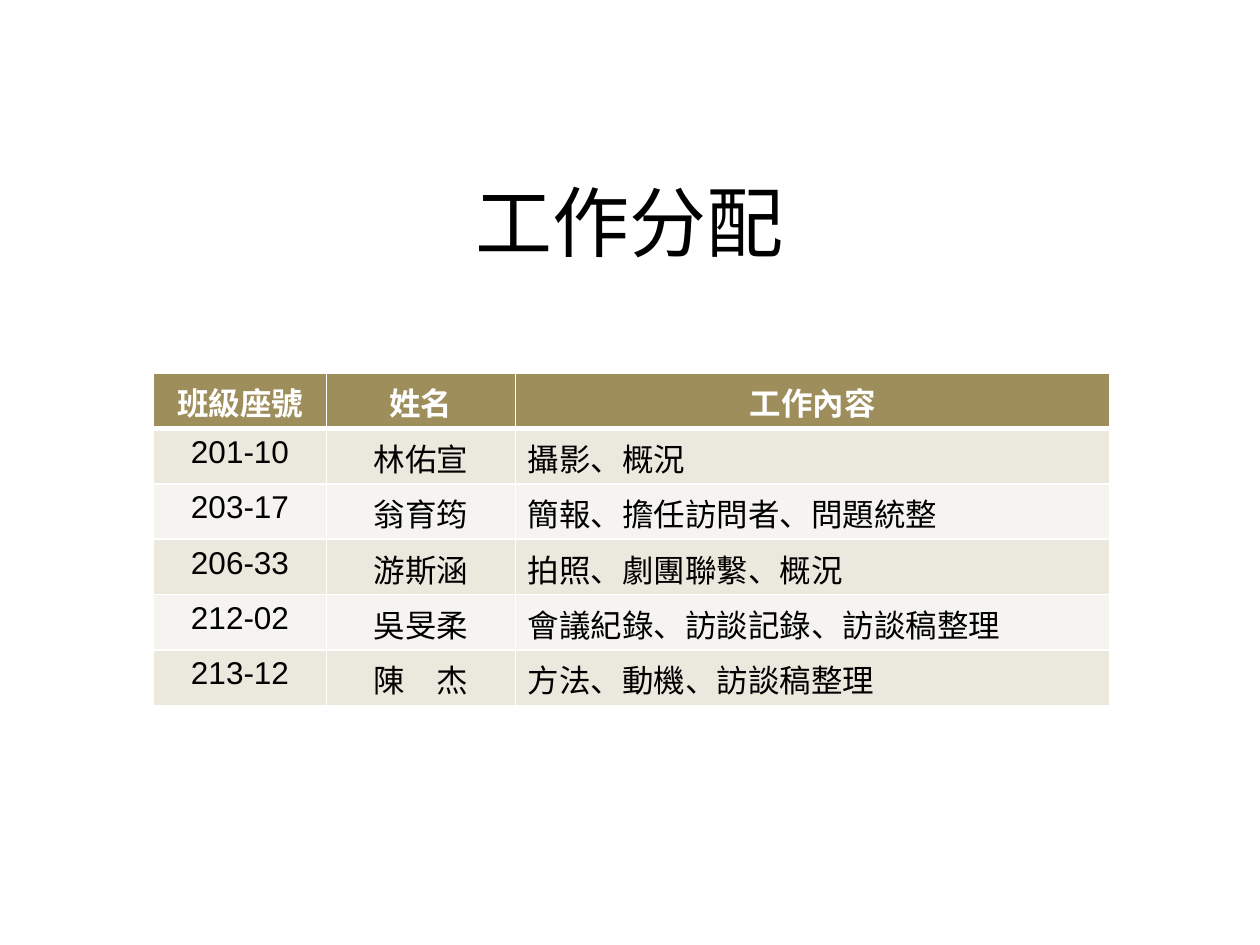
from typing import NamedTuple

import lxml.etree
import pptx
import pptx.dml.color
import pptx.enum.text
import pptx.oxml.ns
import pptx.util

Inches = pptx.util.Inches
Align = pptx.enum.text.PP_ALIGN

COLORS = {
    "text": "000000",
    "white": "FFFFFF",
    "header": "9E8E5C",
    "odd_row": "EBE8DD",
    "even_row": "F6F4F0",
}


class Column(NamedTuple):
    heading: str
    width: float
    alignment: Align


class Assignment(NamedTuple):
    seat: str
    name: str
    work: str


COLUMNS = [
    Column("班級座號", 1.37, Align.CENTER),
    Column("姓名", 1.5, Align.CENTER),
    Column("工作內容", 4.72, Align.LEFT),
]
ASSIGNMENTS = [
    Assignment("201-10", "林佑宣", "攝影、概況"),
    Assignment("203-17", "翁育筠", "簡報、擔任訪問者、問題統整"),
    Assignment("206-33", "游斯涵", "拍照、劇團聯繫、概況"),
    Assignment("212-02", "吳旻柔", "會議紀錄、訪談記錄、訪談稿整理"),
    Assignment("213-12", "陳　杰", "方法、動機、訪談稿整理"),
]
ROW_HEIGHT = 0.44
THIN, THICK = 1, 3


def rgb(color: str) -> pptx.dml.color.RGBColor:
    return pptx.dml.color.RGBColor.from_string(COLORS[color])


def write_text(text_frame, text: str, *, size: float = 18, font: str = "Arial",
               color: str = "text", bold: bool = False,
               alignment: Align = Align.LEFT) -> None:
    paragraph = text_frame.paragraphs[0]
    paragraph.alignment = alignment
    run = paragraph.add_run()
    run.text = text
    run.font.size = pptx.util.Pt(size)
    run.font.name = font
    run.font.bold = bold
    run.font.color.rgb = rgb(color)


def set_borders(cell, *, top: float, bottom: float) -> None:
    """Draw white lines on all four sides, with widths in points."""
    properties = cell._tc.get_or_add_tcPr()
    qn = pptx.oxml.ns.qn
    for side, width in (("L", THIN), ("R", THIN), ("T", top), ("B", bottom)):
        line = lxml.etree.SubElement(properties, qn(f"a:ln{side}"),
                                     w=str(pptx.util.Pt(width)))
        fill = lxml.etree.SubElement(line, qn("a:solidFill"))
        lxml.etree.SubElement(fill, qn("a:srgbClr"), val=COLORS["white"])


def add_title(slide, text: str) -> None:
    title = slide.shapes.add_textbox(Inches(1.5), Inches(1.42), Inches(7), Inches(0.75))
    title.text_frame.word_wrap = True
    title.text_frame.vertical_anchor = pptx.enum.text.MSO_ANCHOR.BOTTOM
    write_text(title.text_frame, text, size=44, font="Times New Roman",
               alignment=Align.CENTER)


def add_assignment_table(slide) -> None:
    rows = [[column.heading for column in COLUMNS], *ASSIGNMENTS]
    table = slide.shapes.add_table(
        len(rows), len(COLUMNS), Inches(1.22), Inches(2.96),
        Inches(sum(column.width for column in COLUMNS)),
        Inches(ROW_HEIGHT * len(rows))).table
    for index, column in enumerate(COLUMNS):
        table.columns[index].width = Inches(column.width)

    for row_index, texts in enumerate(rows):
        is_header = row_index == 0
        row_color = "header" if is_header else "odd_row" if row_index % 2 else "even_row"
        for column_index, (column, text) in enumerate(zip(COLUMNS, texts)):
            cell = table.cell(row_index, column_index)
            set_borders(cell, top=THICK if row_index == 1 else THIN,
                        bottom=THICK if is_header else THIN)
            cell.fill.solid()
            cell.fill.fore_color.rgb = rgb(row_color)
            write_text(cell.text_frame, text, bold=is_header,
                       color="white" if is_header else "text",
                       alignment=Align.CENTER if is_header else column.alignment)


def main() -> None:
    presentation = pptx.Presentation()
    presentation.slide_width = Inches(10)
    presentation.slide_height = Inches(7.5)
    slide = presentation.slides.add_slide(presentation.slide_layouts[6])

    # Heading
    add_title(slide, "工作分配")
    # Who does what
    add_assignment_table(slide)

    presentation.save("out.pptx")


if __name__ == "__main__":
    main()
